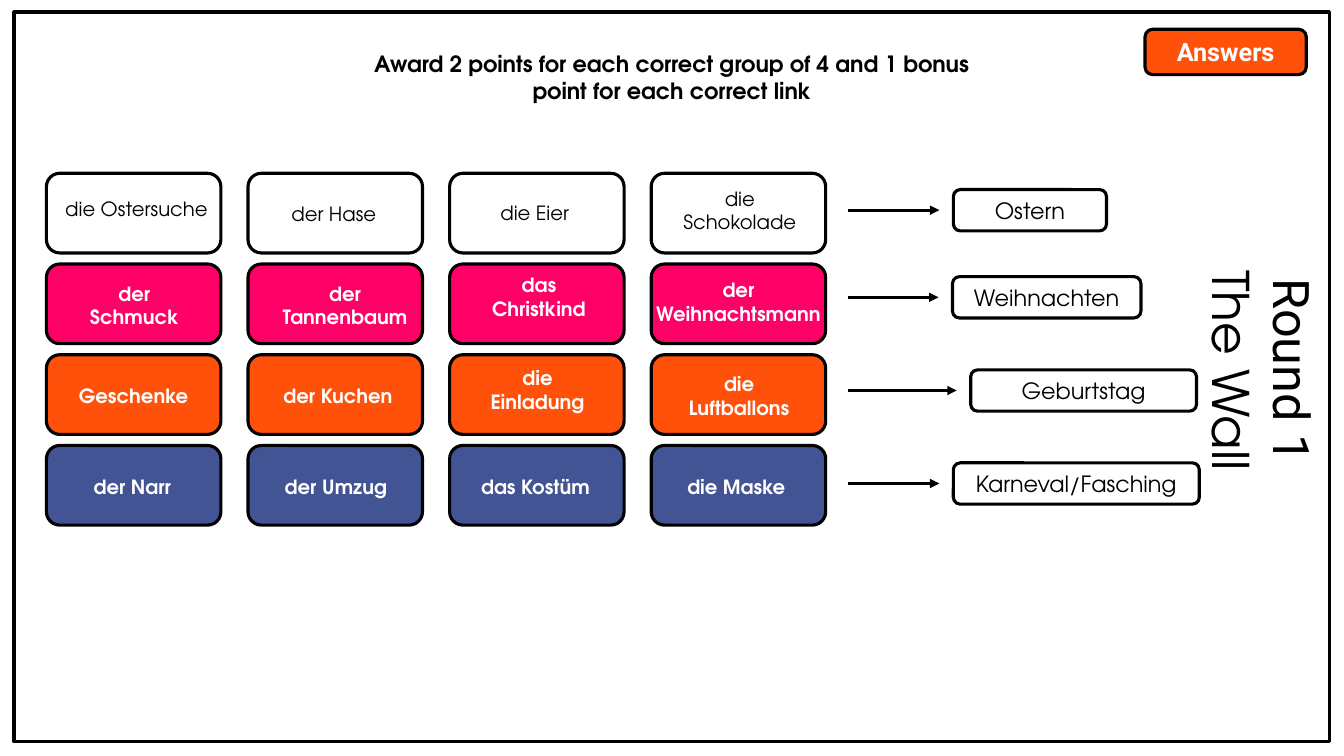
from lxml import etree
from pptx import Presentation
from pptx.dml.color import RGBColor
from pptx.enum.shapes import MSO_CONNECTOR, MSO_SHAPE
from pptx.enum.text import MSO_ANCHOR, MSO_AUTO_SIZE, PP_ALIGN
from pptx.oxml.ns import qn
from pptx.util import Pt

RECTANGLE = MSO_SHAPE.RECTANGLE
ROUNDED = MSO_SHAPE.ROUNDED_RECTANGLE
STRAIGHT = MSO_CONNECTOR.STRAIGHT
MIDDLE = MSO_ANCHOR.MIDDLE
CENTER = PP_ALIGN.CENTER
NO_AUTOFIT = MSO_AUTO_SIZE.NONE

COLORS = {
    "black": "000000",
    "white": "FFFFFF",
    "pink": "FF0066",
    "orange": "FF510A",
    "blue": "435494",
}
HEADING_FONT = "Roboto"
BODY_FONT = "TeX Gyre Adventor"
LINE_WIDTH = 2.25
CARD_WIDTH, CARD_HEIGHT = 124.6, 56.9
COLUMN_STEP, ROW_STEP = 144, 64.8
LABEL_WIDTH = 98.6
ONE_LINE, TWO_LINES = 24.5, 41

# Each label holds its words, line height, width and offset from the card centre.
WALL = [
    (None, [
        ("die Ostersuche", ONE_LINE, 123, 2, -3),
        ("der Hase", ONE_LINE, LABEL_WIDTH, -1, 1),
        ("die Eier", ONE_LINE, LABEL_WIDTH, -1.5, 0),
        ("die Schokolade", TWO_LINES, LABEL_WIDTH, 1, -2),
    ]),
    ("pink", [
        ("der Schmuck", TWO_LINES, LABEL_WIDTH, 0.5, 1),
        ("der Tannenbaum", TWO_LINES, 122, 7, 1),
        ("das Christkind", TWO_LINES, LABEL_WIDTH, 1.5, -5),
        ("der Weihnachtsmann", TWO_LINES, 134.6, 0, -1.5),
    ]),
    ("orange", [
        ("Geschenke", ONE_LINE, LABEL_WIDTH, 0, 1),
        ("der Kuchen", ONE_LINE, LABEL_WIDTH, 2, 1),
        ("die Einladung", TWO_LINES, LABEL_WIDTH, 0.5, -3.5),
        ("die Luftballons", TWO_LINES, LABEL_WIDTH, 0.5, 1),
    ]),
    ("blue", [
        ("der Narr", ONE_LINE, LABEL_WIDTH, -1, 1),
        ("der Umzug", ONE_LINE, LABEL_WIDTH, 0.5, 1),
        ("das Kostüm", ONE_LINE, LABEL_WIDTH, -1, 1),
        ("die Maske", ONE_LINE, LABEL_WIDTH, -1.5, 1),
    ]),
]
LINKS = [
    ("Ostern", (681, 135.4, 109.4, 29.5)),
    ("Weihnachten", (680.4, 197.6, 134.6, 29.5)),
    ("Geburtstag", (693.4, 264.2, 161.3, 29.5)),
    ("Karneval/Fasching", (681, 330.6, 175.7, 29.5)),
]


def rgb(name):
    """Return the named colour."""
    return RGBColor.from_string(COLORS[name])


def write(para, words, size, font=BODY_FONT, color="black", bold=False):
    """Add one centred run to a paragraph."""
    para.alignment = CENTER
    span = para.add_run()
    span.text = words
    span.font.name = font
    span.font.size = Pt(size)
    span.font.bold = bold
    span.font.color.rgb = rgb(color)


def add_panel(page, box, kind=ROUNDED, fill=None, outlined=True):
    """Draw a flat panel with an optional fill and outline."""
    panel = page.shapes.add_shape(kind, *map(Pt, box))
    panel.shadow.inherit = False
    if fill:
        panel.fill.solid()
        panel.fill.fore_color.rgb = rgb(fill)
    else:
        panel.fill.background()
    if outlined:
        panel.line.color.rgb = rgb("black")
        panel.line.width = Pt(LINE_WIDTH)
    else:
        panel.line.fill.background()
    panel.text_frame.word_wrap = True
    panel.text_frame.vertical_anchor = MIDDLE
    return panel


def add_card(page, box, fill, label):
    """Draw one card of the wall with its label."""
    left, top, width, height = box
    words, label_height, label_width, shift_x, shift_y = label
    add_panel(page, box, fill=fill)
    label_left = left + (width - label_width) / 2 + shift_x
    label_top = top + (height - label_height) / 2 + shift_y
    text_box = page.shapes.add_textbox(
        Pt(label_left), Pt(label_top), Pt(label_width), Pt(label_height))
    text_box.text_frame.word_wrap = True
    write(text_box.text_frame.paragraphs[0], words, 14,
          color="white" if fill else "black", bold=bool(fill))


def add_wall(page, left, top):
    """Lay out the cards in rows of one group each."""
    for row, (fill, labels) in enumerate(WALL):
        for column, label in enumerate(labels):
            box = (left + column * COLUMN_STEP, top + row * ROW_STEP,
                   CARD_WIDTH, CARD_HEIGHT)
            add_card(page, box, fill, label)


def add_link(page, arrow_left, box, words):
    """Draw an arrow that leads to the link of a group."""
    left, top, width, height = box
    middle = top + height / 2
    arrow = page.shapes.add_connector(
        STRAIGHT, Pt(arrow_left), Pt(middle), Pt(left - 10), Pt(middle))
    arrow.line.color.rgb = rgb("black")
    arrow.line.width = Pt(LINE_WIDTH)
    etree.SubElement(arrow.line._get_or_add_ln(), qn("a:tailEnd"), type="triangle")
    etree.SubElement(arrow._element.spPr, qn("a:effectLst"))
    panel = add_panel(page, box)
    write(panel.text_frame.paragraphs[0], words, 16)


def add_round_title(page, box):
    """Turn the title on its side in the given box."""
    title = page.shapes.title
    title.left, title.top, title.width, title.height = map(Pt, box)
    title.rotation = 90
    frame = title.text_frame
    frame.auto_size = NO_AUTOFIT
    frame.word_wrap = True
    frame.vertical_anchor = MIDDLE
    lines = [("Round 1", HEADING_FONT), ("The Wall", BODY_FONT)]
    for index, (words, font) in enumerate(lines):
        para = frame.add_paragraph() if index else frame.paragraphs[0]
        para.line_spacing = 1.0
        para.space_before = Pt(0)
        write(para, words, 36, font)


def add_header(page, rule_box, badge_box):
    """Place the scoring rule and the answers badge."""
    badge = add_panel(page, badge_box, fill="orange")
    write(badge.text_frame.paragraphs[0], "Answers", 18, HEADING_FONT, "white", True)
    rule = add_panel(page, rule_box, outlined=False)
    write(rule.text_frame.paragraphs[0],
          "Award 2 points for each correct group of 4 and 1 bonus point "
          "for each correct link", 16, bold=True)


def main():
    """Build and save the answers slide."""
    deck = Presentation()
    deck.slide_width, deck.slide_height = Pt(960), Pt(540)
    page = deck.slides.add_slide(deck.slide_layouts[5])
    add_panel(page, (10, 8.6, 939.6, 521.3), RECTANGLE)
    add_round_title(page, (750.2, 217.4, 303.8, 94.3))
    add_wall(page, 33.2, 123.8)
    for words, box in LINKS:
        add_link(page, 606, box, words)
    add_header(page, (247.7, 29.5, 464.4, 51.1), (817.9, 20.9, 115.2, 32.4))
    deck.save("out.pptx")


if __name__ == "__main__":
    main()
